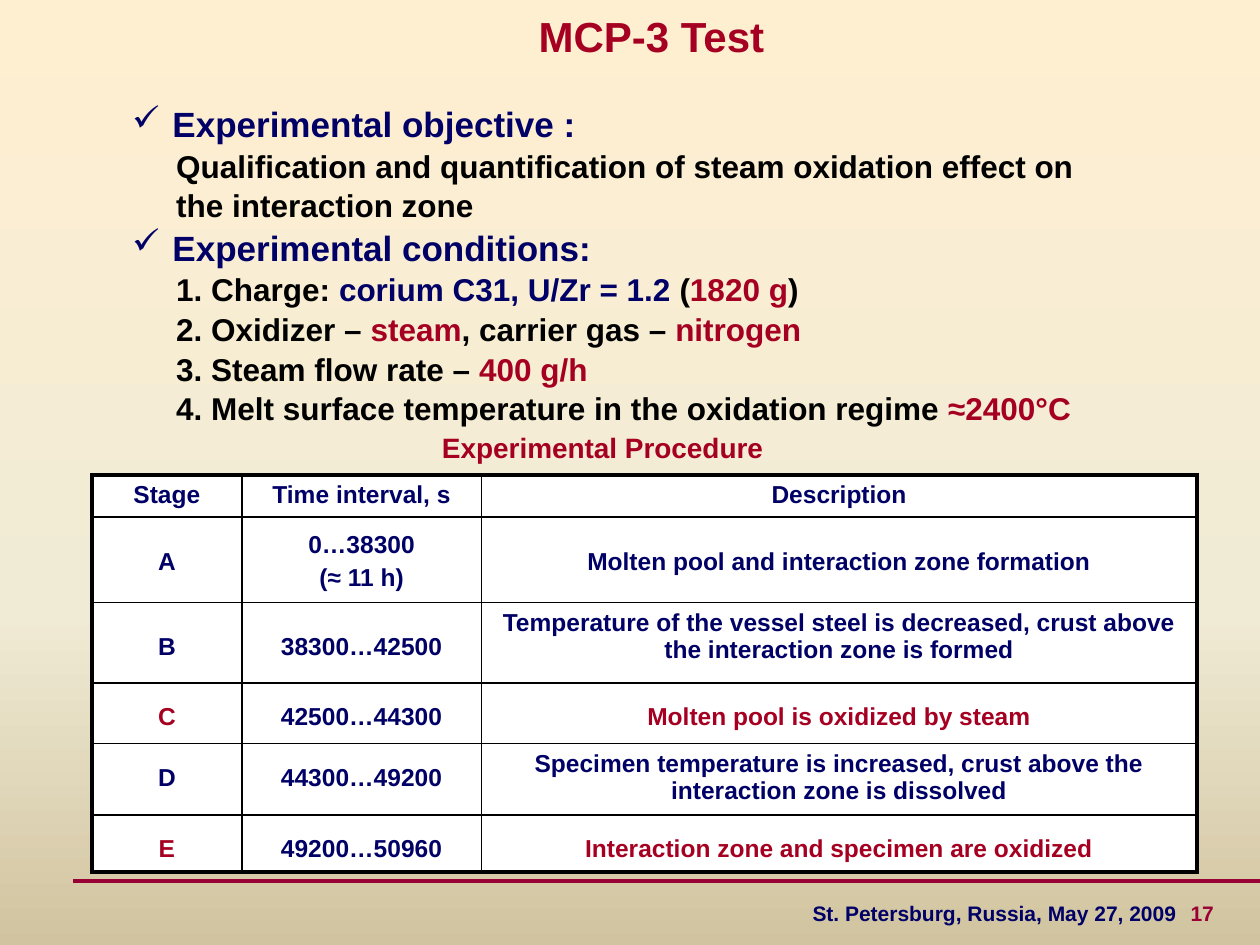
"""Build the MCP-3 test slide with its conditions and procedure table."""
from copy import deepcopy
from dataclasses import dataclass

from lxml import etree
from pptx import Presentation
from pptx import util as u
from pptx.dml.color import RGBColor
from pptx.enum import shapes, text
from pptx.oxml.ns import qn


@dataclass(frozen=True)
class Theme:
    """Colours, font and type sizes."""
    font: str = "Arial"
    navy: str = "000066"
    red: str = "A50021"
    rule: str = "990033"
    black: str = "000000"
    white: str = "FFFFFF"
    sky: tuple = ((0, "FFEFD1"), (0.65, "F0EBD5"), (1, "D1C39F"))
    title: int = 24
    heading: int = 20
    body: int = 18
    caption: int = 16
    cell: int = 14
    footer: int = 12
    thin: float = 1
    thick: float = 2.25


T = Theme()


def write(p, content, size, color=T.navy, align=text.PP_ALIGN.LEFT, spacing=None, before=None):
    """Fill a paragraph with a string or a list of (string, colour) runs."""
    p.alignment = align
    if spacing:
        p.line_spacing = spacing
    if before:
        p.space_before = u.Pt(before)
    for words, tint in [(content, color)] if isinstance(content, str) else content:
        r = p.add_run()
        r.text = words
        r.font.name, r.font.size, r.font.bold = T.font, u.Pt(size), True
        r.font.color.rgb = RGBColor.from_string(tint)


def indent(p, left, bullet=None, tab=None):
    """Set the left margin and an optional hanging bullet or tab stop."""
    pPr = p._p.get_or_add_pPr()
    pPr.set("marL", str(u.Inches(left)))
    pPr.set("indent", str(-u.Inches(left) if bullet else 0))
    if bullet:
        etree.SubElement(pPr, qn("a:buChar"), char=bullet)
    if tab:
        tabs = etree.SubElement(pPr, qn("a:tabLst"))
        etree.SubElement(tabs, qn("a:tab"), pos=str(u.Inches(tab)), algn="l")


def border(cell, widths):
    """Draw the left, right, top and bottom edges of a cell."""
    tcPr = cell._tc.get_or_add_tcPr()
    for i, (side, width) in enumerate(zip("LRTB", widths)):
        ln = etree.Element(qn(f"a:ln{side}"), w=str(u.Pt(width)))
        fill = etree.SubElement(ln, qn("a:solidFill"))
        etree.SubElement(fill, qn("a:srgbClr"), val=T.black)
        tcPr.insert(i, ln)


class Deck:
    """Holds the presentation and the current slide."""

    def __init__(self):
        self.prs = Presentation()
        self.prs.slide_width, self.prs.slide_height = u.Inches(10), u.Inches(7.5)
        self.s = self.prs.slides.add_slide(self.prs.slide_layouts[5])

    def background(self, stops):
        fill = self.s.background.fill
        fill.gradient()
        fill.gradient_angle = 270
        lst = self.s._element.find(".//" + qn("a:gsLst"))
        lst.append(deepcopy(lst[-1]))
        for stop, (position, color) in zip(fill.gradient_stops, stops):
            stop.position = position
            stop.color.rgb = RGBColor.from_string(color)

    def title(self, words, box):
        sp = self.s.shapes.title
        sp.left, sp.top, sp.width, sp.height = map(u.Inches, box)
        tf = sp.text_frame
        tf.auto_size = text.MSO_AUTO_SIZE.NONE
        tf.vertical_anchor = text.MSO_ANCHOR.MIDDLE
        write(tf.paragraphs[0], words, T.title, T.red, text.PP_ALIGN.CENTER)

    def textbox(self, box, wrap=True, anchor=text.MSO_ANCHOR.TOP):
        tf = self.s.shapes.add_textbox(*map(u.Inches, box)).text_frame
        tf.word_wrap, tf.vertical_anchor = wrap, anchor
        return tf

    def line(self, x1, y1, x2, y2):
        ends = map(u.Inches, (x1, y1, x2, y2))
        sp = self.s.shapes.add_connector(shapes.MSO_CONNECTOR.STRAIGHT, *ends)
        sp.line.color.rgb = RGBColor.from_string(T.rule)
        sp.line.width = u.Pt(T.thick)
        etree.SubElement(sp._element.spPr, qn("a:effectLst"))

    def table(self, box, cols, heights, rows):
        frame = self.s.shapes.add_table(len(rows), len(cols), *map(u.Inches, box))
        tbl = frame.table
        for col, width in zip(tbl.columns, cols):
            col.width = u.Inches(width)
        for row, height in zip(tbl.rows, heights):
            row.height = u.Inches(height)
        for i, (values, colors, spacings) in enumerate(rows):
            for j, (value, color, spacing) in enumerate(zip(values, colors, spacings)):
                cell = tbl.cell(i, j)
                cell.fill.solid()
                cell.fill.fore_color.rgb = RGBColor.from_string(T.white)
                outer = (j == 0, j == len(cols) - 1, i == 0, i == len(rows) - 1)
                border(cell, [T.thick if edge else T.thin for edge in outer])
                tf = cell.text_frame
                for n, words in enumerate(value.split("\n")):
                    p = tf.add_paragraph() if n else tf.paragraphs[0]
                    write(p, words, T.cell, color, text.PP_ALIGN.CENTER,
                          None if n else spacing, 3 if n else None)


CONDITIONS = [
    ("Experimental objective :", True),
    ("Qualification and quantification of steam oxidation effect on", False),
    ("the interaction zone", False),
    ("Experimental conditions:", True),
    ([("1. Charge: ", T.black), ("corium C31, U/Zr = 1.2 ", T.navy), ("(", T.black),
      ("1820 g", T.red), (")", T.black)], False),
    ([("2. Oxidizer – ", T.black), ("steam", T.red), (", carrier gas – ", T.black),
      ("nitrogen", T.red)], False),
    ([("3. Steam flow rate –", T.black), (" 400 g/h", T.red)], False),
    ([("4. Melt surface temperature in the oxidation regime ", T.black),
      ("≈2400°С", T.red)], False),
]
PLAIN = (T.navy, T.navy, T.navy)
OXIDATION = (T.red, T.navy, T.red)
STAGES = [
    (("Stage", "Time interval, s", "Description"), PLAIN, (None, None, None)),
    (("A", "0…38300\n(≈ 11 h)", "Molten pool and interaction zone formation"),
     PLAIN, (1.9, 1.3, 1.9)),
    (("B", "38300…42500", "Temperature of the vessel steel is decreased, crust above "
      "the interaction zone is formed"), PLAIN, (1.9, 1.9, None)),
    (("C", "42500…44300", "Molten pool is oxidized by steam"), OXIDATION, (1.5, 1.5, 1.5)),
    (("D", "44300…49200", "Specimen temperature is increased, crust above the "
      "interaction zone is dissolved"), PLAIN, (1.5, 1.5, None)),
    (("E", "49200…50960", "Interaction zone and specimen are oxidized"),
     OXIDATION, (1.5, 1.5, 1.5)),
]


def main():
    """Build and save the slide."""
    deck = Deck()
    deck.background(T.sky)
    deck.line(0.58, 6.99, 10, 6.99)

    p = deck.textbox((6.35, 7, 3.65, 0.5), False, text.MSO_ANCHOR.MIDDLE).paragraphs[0]
    indent(p, 0, tab=3.26)
    write(p, [("St. Petersburg, Russia, May 27, 2009\t", T.navy), ("17", T.rule)], T.footer)

    deck.title("MCP-3 Test", (0.92, 0, 8.5, 0.56))
    deck.table((0.73, 3.77, 8.77, 3.06), (1.19, 1.9, 5.68),
               (0.32, 0.65, 0.64, 0.48, 0.54, 0.43), STAGES)
    caption = deck.textbox((3.41, 3.37, 2.76, 0.37), False)
    write(caption.paragraphs[0], "Experimental Procedure", T.caption, T.red)

    tf = deck.textbox((0.95, 0.75, 8.62, 2.85))
    for i, (content, heading) in enumerate(CONDITIONS):
        p = tf.add_paragraph() if i else tf.paragraphs[0]
        p.line_spacing = 1.05
        indent(p, 0.32 if heading else 0.35, "✓" if heading else None)
        write(p, content, T.heading if heading else T.body, T.navy if heading else T.black)
    deck.prs.save("out.pptx")


if __name__ == "__main__":
    main()
